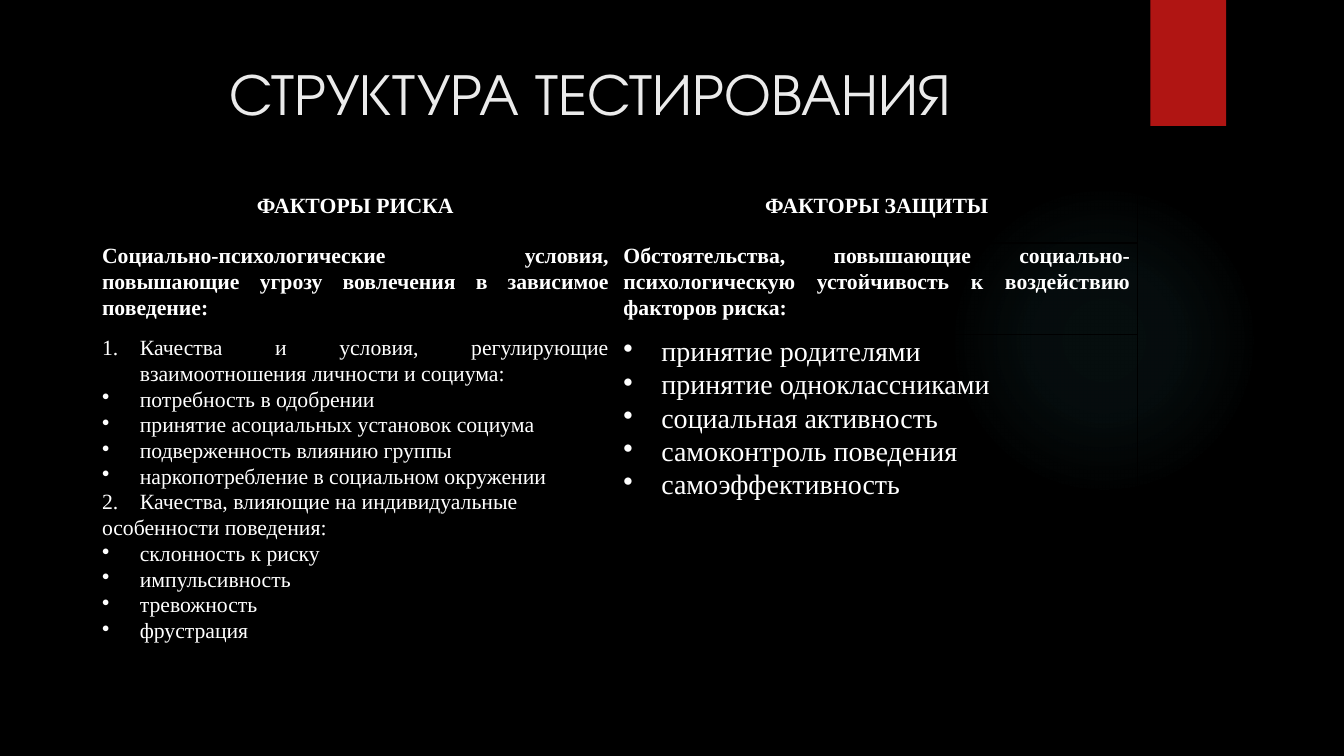
from dataclasses import dataclass

from lxml.etree import SubElement as Sub
from pptx import Presentation
from pptx.dml.color import RGBColor as Rgb
from pptx.enum.shapes import MSO_SHAPE as Shape
from pptx.enum.text import MSO_ANCHOR as Anchor, MSO_AUTO_SIZE as Fit, PP_ALIGN as Align
from pptx.oxml.ns import qn
from pptx.util import Pt

HUES = {"back": "000000", "glow": "50B9C1", "mark": "B01513",
        "title": "EBEBEB", "text": "FFFFFF", "edge": "000000"}
SERIF = "Times New Roman"
STEP = 27


@dataclass
class Line:
    text: str
    size: float = 15.5
    bold: bool = False
    align: Align = Align.JUSTIFY
    mark: str = ""  # "•" bullet, "1" number, "tab" tab stop only


@dataclass
class Box:
    kind: Shape
    left: float
    top: float
    width: float
    height: float


def hue(name: str) -> Rgb:
    return Rgb.from_string(HUES[name])


def write(para, text: str, *, size: float, font: str = SERIF, color: str = "text",
          bold: bool = False, align: Align = Align.JUSTIFY, space: float = 1.0,
          mark: str = "") -> None:
    """Fill one paragraph and format it."""
    para.text = text
    para.alignment, para.line_spacing = align, space
    para.space_before = para.space_after = Pt(0)
    props = para._p.get_or_add_pPr()
    if mark == "tab":
        Sub(Sub(props, qn("a:tabLst")), qn("a:tab"), pos=str(Pt(STEP)), algn="l")
    elif mark:
        props.set("marL", str(Pt(STEP)))
        props.set("indent", str(-Pt(STEP)))
        if mark == "1":
            Sub(props, qn("a:buAutoNum"), type="arabicPeriod")
        else:
            Sub(props, qn("a:buChar"), char=mark)
    for run in para.runs:
        run.font.name, run.font.size, run.font.bold = font, Pt(size), bold
        run.font.color.rgb = hue(color)


def draw(slide, box: Box):
    item = slide.shapes.add_shape(box.kind, Pt(box.left), Pt(box.top),
                                  Pt(box.width), Pt(box.height))
    item.shadow.inherit = False
    item.line.fill.background()
    return item


def shine(item) -> None:
    """Give a shape a round gradient that fades out."""
    item.fill.gradient()
    grad = item.fill._xPr.find(qn("a:gradFill"))
    for child in list(grad):
        grad.remove(child)
    stops = Sub(grad, qn("a:gsLst"))
    for pos, alpha in ((0, 7), (36, 6), (69, 0)):
        stop = Sub(stops, qn("a:gs"), pos=str(pos * 1000))
        tint = Sub(stop, qn("a:srgbClr"), val=HUES["glow"])
        Sub(tint, qn("a:alpha"), val=str(alpha * 1000))
    path = Sub(grad, qn("a:path"), path="circle")
    Sub(path, qn("a:fillToRect"), **{side: "50000" for side in "ltrb"})


def edge(cell) -> None:
    """Draw thin borders on a clear cell."""
    props = cell._tc.get_or_add_tcPr()
    for side in ("lnL", "lnR", "lnT", "lnB"):
        line = Sub(props, qn(f"a:{side}"), w=str(Pt(1)))
        Sub(Sub(line, qn("a:solidFill")), qn("a:srgbClr"), val=HUES["edge"])
    cell.fill.background()


def fill(cell, lines: list[Line], anchor: Anchor) -> None:
    edge(cell)
    cell.margin_left = cell.margin_right = Pt(5.4)
    cell.margin_top = cell.margin_bottom = 0
    cell.vertical_anchor = anchor
    frame = cell.text_frame
    for num, line in enumerate(lines):
        para = frame.add_paragraph() if num else frame.paragraphs[0]
        write(para, line.text, size=line.size, bold=line.bold,
              align=line.align, space=1.07, mark=line.mark)


def head(text: str) -> list[Line]:
    return [Line(text, bold=True, align=Align.CENTER)]


def lead(text: str) -> list[Line]:
    return [Line(text, bold=True)]


def dots(*texts: str, size: float = 15.5) -> list[Line]:
    return [Line(text, size, mark="•") for text in texts]


RISKS = [
    Line("Качества и условия, регулирующие взаимоотношения личности и социума:", mark="1"),
    *dots("потребность в одобрении", "принятие асоциальных установок социума",
          "подверженность влиянию группы", "наркопотребление в социальном окружении"),
    Line("2.\tКачества, влияющие на индивидуальные особенности поведения:",
         align=Align.LEFT, mark="tab"),
    *dots("склонность к риску", "импульсивность", "тревожность", "фрустрация"),
]
GUARDS = dots("принятие родителями", "принятие одноклассниками", "социальная активность",
              "самоконтроль поведения", "самоэффективность", size=20)
ROWS = [
    (54, Anchor.MIDDLE, [head("ФАКТОРЫ РИСКА"), head("ФАКТОРЫ ЗАЩИТЫ")]),
    (65.5, Anchor.TOP, [
        lead("Социально-психологические условия, повышающие угрозу вовлечения "
             "в зависимое поведение:"),
        lead("Обстоятельства, повышающие социально-психологическую устойчивость "
             "к воздействию факторов риска:")]),
    (269.5, Anchor.TOP, [RISKS, GUARDS]),
]


def main() -> None:
    deck = Presentation()
    deck.slide_width, deck.slide_height = Pt(960), Pt(540)
    slide = deck.slides.add_slide(deck.slide_layouts[5])
    slide.background.fill.solid()
    slide.background.fill.fore_color.rgb = hue("back")

    # Backdrop: soft glow and red tab
    shine(draw(slide, Box(Shape.OVAL, 677.5, 131.8, 221.8, 221.8)))
    flag = draw(slide, Box(Shape.RECTANGLE, 821.8, 0, 54, 90))
    flag.fill.solid()
    flag.fill.fore_color.rgb = hue("mark")

    # Title
    title = slide.shapes.title
    title.left, title.top, title.width, title.height = Pt(51), Pt(36), Pt(741), Pt(60)
    frame = title.text_frame
    frame.auto_size, frame.word_wrap = Fit.NONE, True
    frame.vertical_anchor = Anchor.MIDDLE
    write(frame.paragraphs[0], "СТРУКТУРА ТЕСТИРОВАНИЯ", size=42,
          font="TeX Gyre Adventor", color="title", align=Align.CENTER)

    # Table of factors
    high = sum(row[0] for row in ROWS)
    table = slide.shapes.add_table(len(ROWS), 2, Pt(67.5), Pt(119.5),
                                   Pt(745), Pt(high)).table
    table.first_row = table.horz_banding = False
    for num, (tall, anchor, cells) in enumerate(ROWS):
        table.rows[num].height = Pt(tall)
        for col, lines in enumerate(cells):
            fill(table.cell(num, col), lines, anchor)

    deck.save("out.pptx")


if __name__ == "__main__":
    main()
